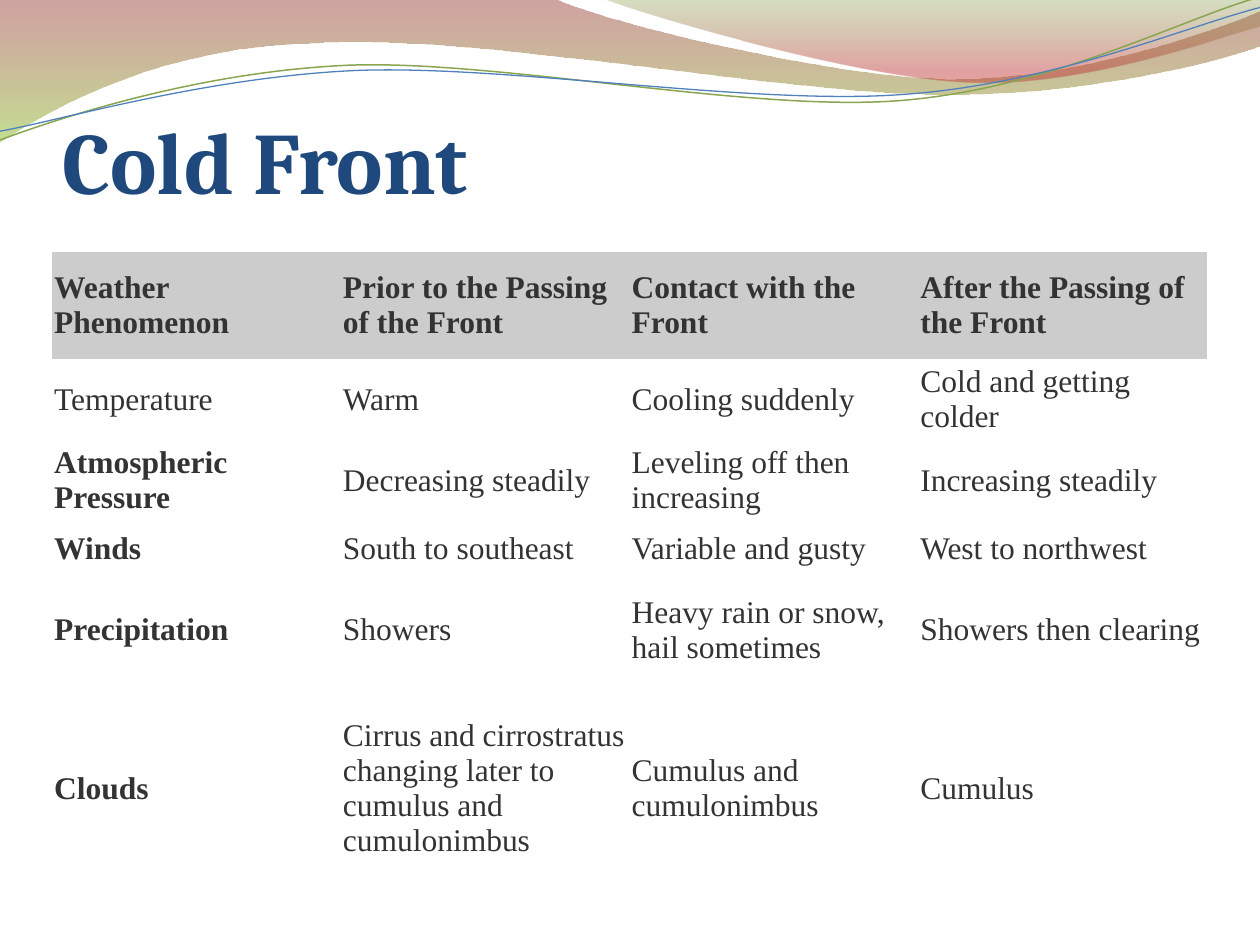
from lxml import etree
from pptx import Presentation
from pptx.dml.color import RGBColor
from pptx.enum import text
from pptx.oxml.ns import qn
from pptx.util import Pt

WINE = RGBColor(0x97, 0x33, 0x30)
LIME = RGBColor(0x95, 0xC2, 0x38)
OLIVE = RGBColor(0x76, 0x95, 0x37)
RED = RGBColor(0xBE, 0x33, 0x30)
GREEN = RGBColor(0x89, 0xA5, 0x4F)
BLUE = RGBColor(0x4F, 0x81, 0xBD)
NAVY = RGBColor(0x1F, 0x49, 0x7D)
INK = RGBColor(0x33, 0x33, 0x33)
GREY = RGBColor(0xCC, 0xCC, 0xCC)
WHITE = RGBColor(0xFF, 0xFF, 0xFF)

TITLE = "Cold Front"
ROWS = [
    ("Weather Phenomenon", "Prior to the Passing of the Front",
     "Contact with the Front", "After the Passing of the Front"),
    ("Temperature", "Warm", "Cooling suddenly", "Cold and getting colder"),
    ("Atmospheric Pressure", "Decreasing steadily",
     "Leveling off then increasing", "Increasing steadily"),
    ("Winds", "South to southeast", "Variable and gusty", "West to northwest"),
    ("Precipitation", "Showers", "Heavy rain or snow, hail sometimes",
     "Showers then clearing"),
    ("Clouds", "Cirrus and cirrostratus changing later to cumulus and cumulonimbus",
     "Cumulus and cumulonimbus", "Cumulus"),
]
ROW_HEIGHTS = [61.2, 46.2, 46.2, 31.8, 61.2, 120.2]
COLUMN_WIDTH = 165
PLAIN_HEADING = "Temperature"

# Each segment holds one point (straight) or three points (Bezier curve), in points.
# Gradient stops: position, colour, opacity in percent.
BANDS = [
    ([(0, -0.7), [(317, -0.7)], [(343, 12), (478, 45), (546, 45)],
      [(614, 45), (690, 19), (720, 6.5)], [(720.7, 26)],
      [(708, 32), (626, 55), (537, 54)], [(448, 54), (275, 20), (185, 24.5)],
      [(93, 26), (33, 60), (-0.7, 81.5)], [(0, -0.7)]],
     [(0, WINE, 45), (1, LIME, 55)]),
    ([(345, -0.7), [(366, 8), (491, 45), (554, 47)],
      [(616, 50), (692, 23), (720, 15)], [(720, 0)], [(345, -0.7)]],
     [(0, OLIVE, 30), (0.8, RED, 45)]),
]
WAVES = [
    ([(0, 80), [(35, 67), (114, 41), (199, 37.3)],
      [(284, 34), (427, 64), (513, 57.6)], [(600, 51), (675, 11), (718.6, -1.4)]],
     GREEN, 0.85),
    ([(0, 75), [(34, 69), (118, 44), (204, 40.3)],
      [(290, 37), (430, 60.5), (516, 54)], [(602, 48), (678, 15), (720, 4.3)]],
     BLUE, 0.75),
]
UNITS = 100  # freeform units per point


def add_outline(slide, outline, close):
    """Draw the corners as a freeform, then turn each group of three into a curve."""
    start, *segments = outline
    points = [(round(x * UNITS), round(y * UNITS))
              for x, y in [start] + [point for segment in segments for point in segment]]
    builder = slide.shapes.build_freeform(*points[0], scale=Pt(1) / UNITS)
    builder.add_line_segments(points[1:], close=close)
    shape = builder.convert_to_shape()
    shape.shadow.inherit = False
    lines = iter(list(shape.element.spPr.iter(qn("a:lnTo"))))
    for segment in segments:
        group = [next(lines) for _ in segment]
        if len(group) == 3:
            curve = etree.Element(qn("a:cubicBezTo"))
            group[0].addprevious(curve)
            for line in group:
                curve.append(line[0])
                line.getparent().remove(line)
    return shape


def add_band(slide, outline, stops):
    shape = add_outline(slide, outline, True)
    shape.line.fill.background()
    shape.fill.gradient()
    shape.fill.gradient_angle = 270
    for stop, (position, colour, _) in zip(shape.fill.gradient_stops, stops):
        stop.position = position
        stop.color.rgb = colour
    for element, (_, _, opacity) in zip(shape.element.spPr.iter(qn("a:srgbClr")), stops):
        etree.SubElement(element, qn("a:alpha"), val=str(opacity * 1000))


def add_wave(slide, outline, colour, width):
    shape = add_outline(slide, outline, False)
    shape.fill.background()
    shape.line.color.rgb = colour
    shape.line.width = Pt(width)


def add_run(paragraph, words, font, size, colour, bold):
    run = paragraph.add_run()
    run.text = words
    run.font.name = font
    run.font.size = Pt(size)
    run.font.color.rgb = colour
    run.font.bold = bold


def add_title(slide):
    frame = slide.shapes.add_textbox(Pt(36), Pt(54), Pt(648), Pt(67)).text_frame
    frame.word_wrap = True
    frame.vertical_anchor = text.MSO_ANCHOR.BOTTOM
    frame.margin_left = frame.margin_right = frame.margin_bottom = 0
    frame.margin_top = Pt(3.6)
    add_run(frame.paragraphs[0], TITLE, "Cambria", 50, NAVY, True)


def add_weather_table(slide):
    columns = len(ROWS[0])
    frame = slide.shapes.add_table(len(ROWS), columns, Pt(30), Pt(144),
                                   Pt(COLUMN_WIDTH * columns), Pt(sum(ROW_HEIGHTS)))
    table = frame.table
    table.first_row = table.horz_banding = False
    style = next(frame.element.iter(qn("a:tableStyleId")))
    style.text = "{2D5ABB26-0587-4C30-8999-92F81FD0307C}"  # no style, no grid
    for column in table.columns:
        column.width = Pt(COLUMN_WIDTH)
    for i, (row, height) in enumerate(zip(ROWS, ROW_HEIGHTS)):
        table.rows[i].height = Pt(height)
        for j, words in enumerate(row):
            cell = table.cell(i, j)
            cell.fill.solid()
            cell.fill.fore_color.rgb = GREY if i == 0 else WHITE
            cell.vertical_anchor = text.MSO_ANCHOR.MIDDLE
            cell.margin_left = cell.margin_right = Pt(1)
            cell.margin_top = cell.margin_bottom = Pt(1)
            bold = (i == 0 or j == 0) and words != PLAIN_HEADING
            add_run(cell.text_frame.paragraphs[0], words, "Times New Roman", 18, INK, bold)


def main():
    presentation = Presentation()
    presentation.slide_width, presentation.slide_height = Pt(720), Pt(540)
    slide = presentation.slides.add_slide(presentation.slide_layouts[6])
    for band in BANDS:
        add_band(slide, *band)
    for wave in WAVES:
        add_wave(slide, *wave)
    add_title(slide)
    add_weather_table(slide)
    presentation.save("out.pptx")


if __name__ == "__main__":
    main()
